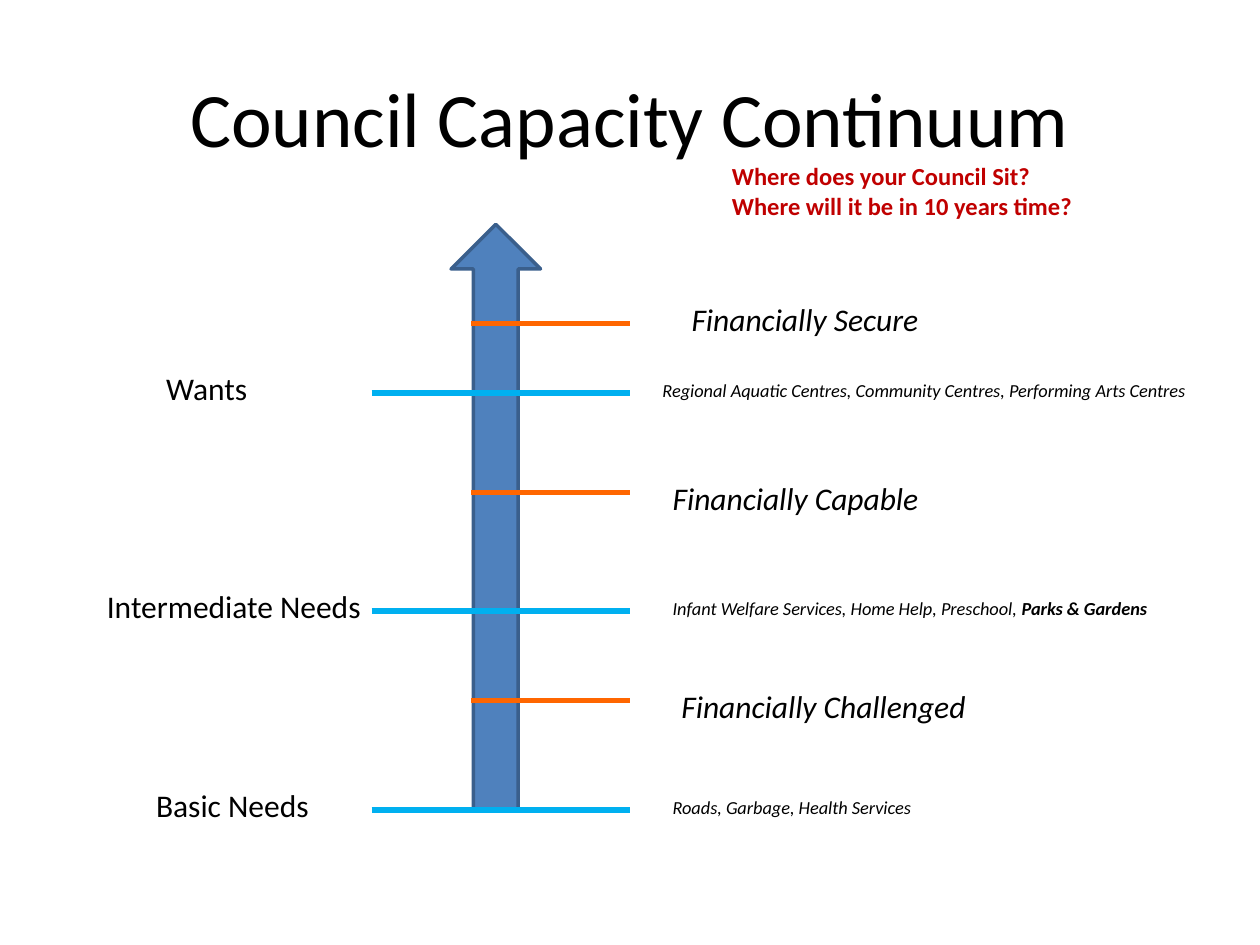
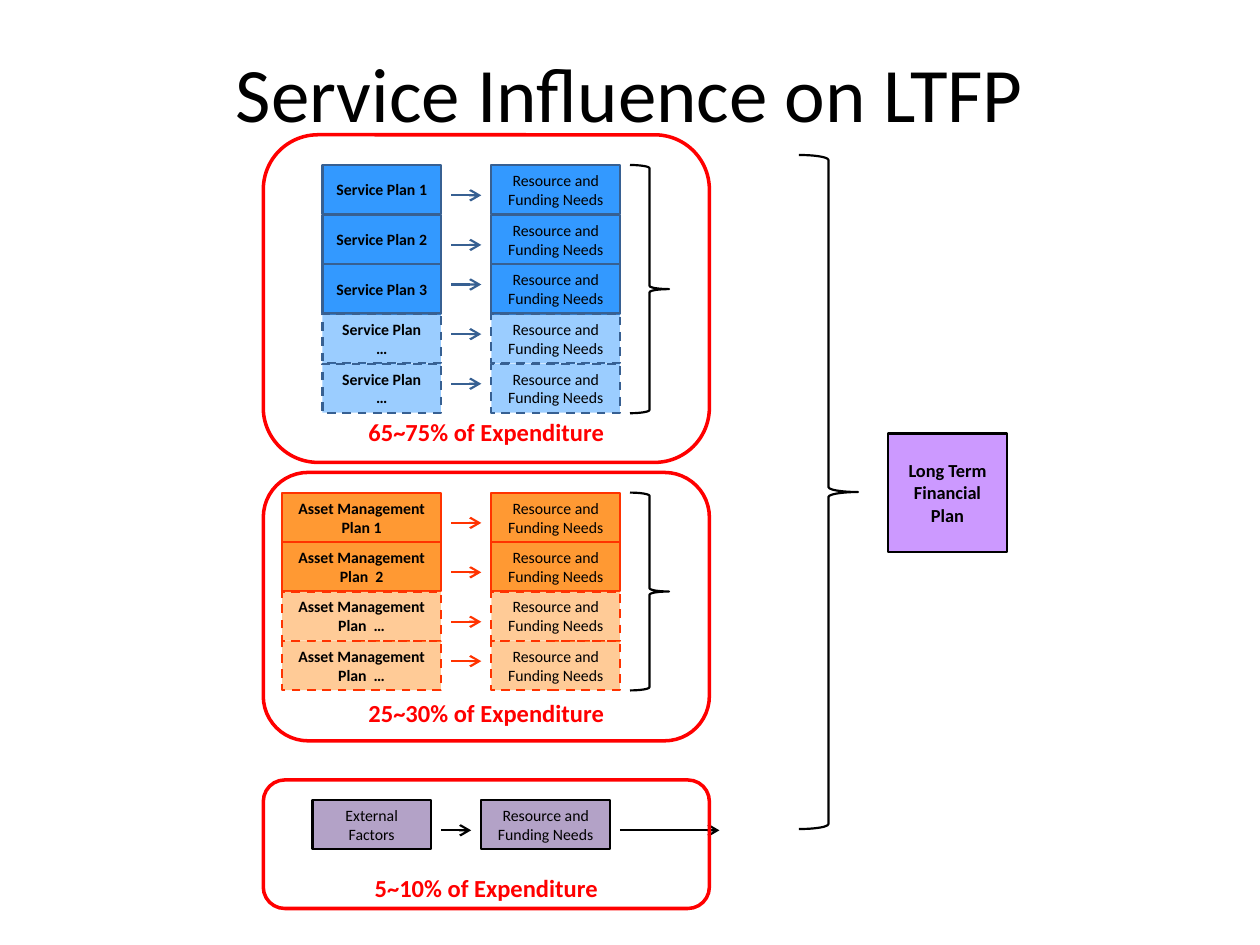
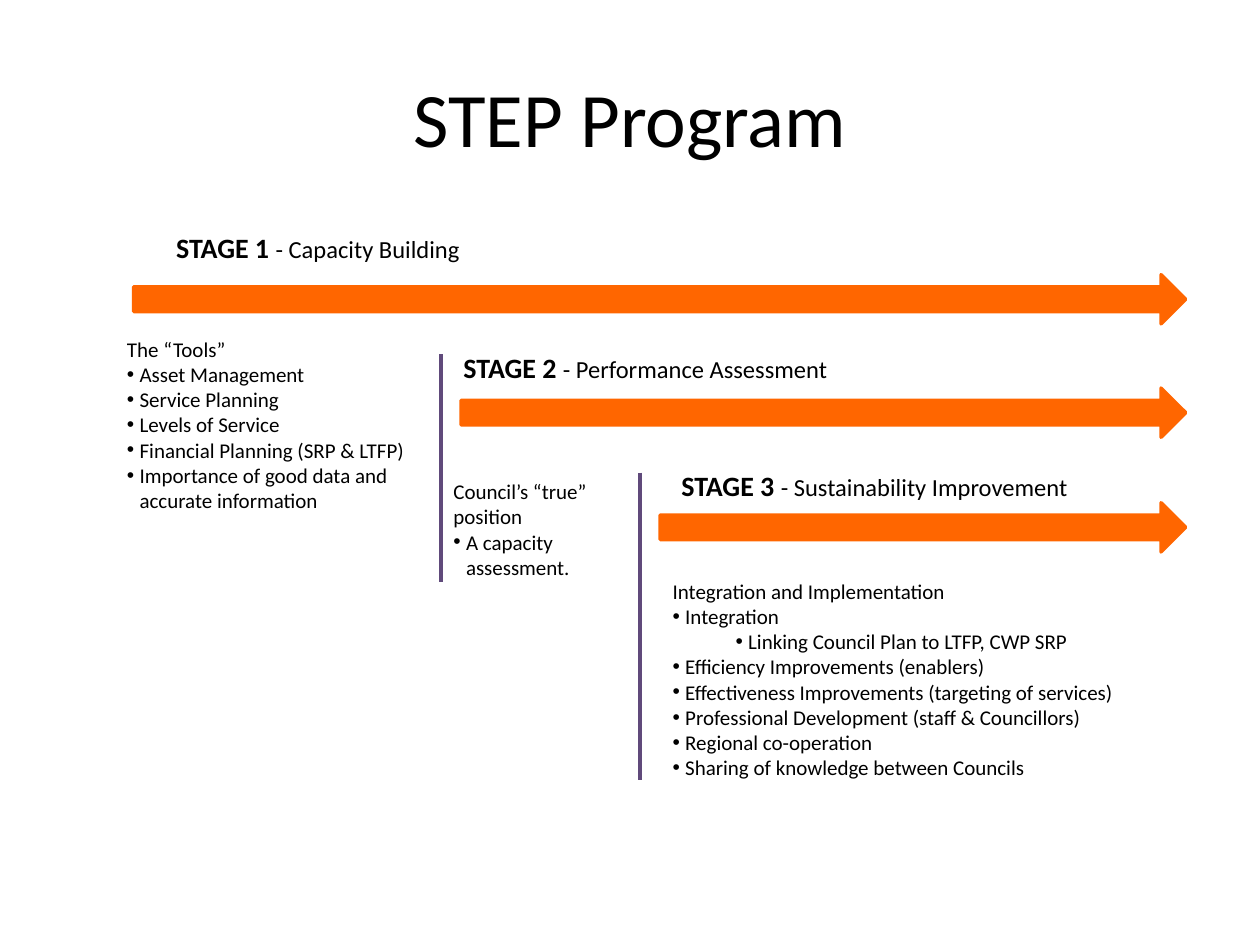
from lxml.etree import SubElement
from pptx import Presentation
from pptx.dml.color import RGBColor
from pptx.enum.dml import MSO_LINE
from pptx.enum.shapes import MSO_CONNECTOR, MSO_SHAPE
from pptx.enum.text import MSO_ANCHOR, MSO_AUTO_SIZE, PP_ALIGN
from pptx.oxml.ns import qn
from pptx.util import Inches, Pt

FONT = "Calibri"
BLACK = RGBColor(0x00, 0x00, 0x00)
RED = RGBColor(0xFF, 0x00, 0x00)
DARK_RED = RGBColor(0xC0, 0x00, 0x00)
ARROW_BLUE = RGBColor(0x4F, 0x81, 0xBD)
ARROW_EDGE = RGBColor(0x3A, 0x5F, 0x8C)
NEED_BLUE = RGBColor(0x00, 0xB0, 0xF0)
ORANGE = RGBColor(0xFF, 0x66, 0x00)
SERVICE_BLUE = RGBColor(0x33, 0x99, 0xFF)
SERVICE_EDGE = RGBColor(0x37, 0x60, 0x92)
ASSET_ORANGE = RGBColor(0xFF, 0x99, 0x33)
ASSET_EDGE = RGBColor(0xFF, 0x33, 0x00)
EXTERNAL_PURPLE = RGBColor(0xB3, 0xA2, 0xC7)
PLAN_PURPLE = RGBColor(0xCC, 0x99, 0xFF)
DIVIDER_PURPLE = RGBColor(0x60, 0x4A, 0x7B)
NEEDS = "Resource and Funding Needs"


def add_run(paragraph, text, size, color=BLACK, bold=False, italic=False):
    run = paragraph.add_run()
    run.text = text
    font = run.font
    font.name, font.size, font.bold, font.italic = FONT, Pt(size), bold, italic
    font.color.rgb = color


def add_titled_slide(presentation, title, height=1.25):
    slide = presentation.slides.add_slide(presentation.slide_layouts[5])
    shape = slide.shapes.title
    shape.left, shape.top = Inches(0.5), Inches(0.3)
    shape.width, shape.height = Inches(9), Inches(height)
    shape.text_frame.vertical_anchor = MSO_ANCHOR.MIDDLE
    paragraph = shape.text_frame.paragraphs[0]
    paragraph.alignment = PP_ALIGN.CENTER
    add_run(paragraph, title, 44)
    return slide


def add_text_box(slide, left, top, width, height, wrap=True):
    box = slide.shapes.add_textbox(Inches(left), Inches(top), Inches(width), Inches(height))
    box.text_frame.word_wrap = wrap
    box.text_frame.auto_size = MSO_AUTO_SIZE.SHAPE_TO_FIT_TEXT
    return box.text_frame


def add_label(slide, left, top, width, height, text, size, italic=False):
    paragraph = add_text_box(slide, left, top, width, height, wrap=False).paragraphs[0]
    add_run(paragraph, text, size, italic=italic)
    return paragraph


def add_preset(slide, preset, left, top, width, height, fill, edge, weight):
    shape = slide.shapes.add_shape(preset, Inches(left), Inches(top), Inches(width), Inches(height))
    shape.shadow.inherit = False
    if fill is None:
        shape.fill.background()
    else:
        shape.fill.solid()
        shape.fill.fore_color.rgb = fill
    shape.line.color.rgb = edge
    shape.line.width = Pt(weight)
    return shape


def add_line(slide, start, end, color, weight, arrow=False):
    points = [Inches(value) for value in (*start, *end)]
    connector = slide.shapes.add_connector(MSO_CONNECTOR.STRAIGHT, *points)
    connector.line.color.rgb = color
    connector.line.width = Pt(weight)
    properties = connector.element.spPr
    if arrow:
        SubElement(properties.find(qn("a:ln")), qn("a:tailEnd"), type="arrow")
    SubElement(properties, qn("a:effectLst"))


def set_shape_text(shape, text, size, color=BLACK, bold=False, anchor=MSO_ANCHOR.MIDDLE):
    frame = shape.text_frame
    frame.word_wrap = True
    frame.vertical_anchor = anchor
    paragraph = frame.paragraphs[0]
    paragraph.alignment = PP_ALIGN.CENTER
    add_run(paragraph, text, size, color, bold)


def add_need_level(slide, y, name, name_left, name_width, examples, left, width):
    add_line(slide, (2.95, y), (5, y), NEED_BLUE, 3.75)
    add_label(slide, name_left, y - 0.24, name_width, 0.4, name, 18)
    return add_label(slide, left, y - 0.16, width, 0.28, examples, 10.5, italic=True)


def add_capacity_level(slide, y, name, left, top, width):
    add_line(slide, (3.74, y), (5, y), ORANGE, 3)
    add_label(slide, left, top, width, 0.4, name, 18, italic=True)


def build_continuum(presentation):
    slide = add_titled_slide(presentation, "Council Capacity Continuum")
    add_preset(slide, MSO_SHAPE.UP_ARROW, 3.58, 1.78, 0.71, 4.65, ARROW_BLUE, ARROW_EDGE, 2)
    add_need_level(slide, 6.43, "Basic Needs", 1.14, 1.43,
                   "Roads, Garbage, Health Services", 5.24, 2.2)
    examples = add_need_level(slide, 4.85, "Intermediate Needs", 0.75, 2.24,
                              "Infant Welfare Services, Home Help, Preschool, ", 5.24, 4.01)
    add_run(examples, "Parks & Gardens", 10.5, bold=True, italic=True)
    add_need_level(slide, 3.12, "Wants", 1.22, 0.85,
                   "Regional Aquatic Centres, Community Centres, Performing Arts Centres", 5.16, 4.43)
    add_capacity_level(slide, 5.56, "Financially Challenged", 5.31, 5.4, 2.48)
    add_capacity_level(slide, 3.91, "Financially Capable", 5.24, 3.75, 2.16)
    add_capacity_level(slide, 2.57, "Financially Secure", 5.39, 2.33, 2.02)
    questions = add_text_box(slide, 5.71, 1.23, 3.62, 0.57)
    add_run(questions.paragraphs[0], "Where does your Council Sit?", 14, DARK_RED, bold=True)
    add_run(questions.add_paragraph(), "Where will it be in 10 years time?", 14, DARK_RED, bold=True)


def add_cell(slide, left, top, width, text, fill, edge, bold=False, opacity=None):
    cell = add_preset(slide, MSO_SHAPE.RECTANGLE, left, top, width, 0.39, fill, edge, 1.25)
    set_shape_text(cell, text, 9, bold=bold)
    if opacity:
        cell.line.dash_style = MSO_LINE.DASH
        color = cell.element.spPr.find(qn("a:solidFill"))[0]
        SubElement(color, qn("a:alpha"), val=str(opacity * 1000))


def add_brace(slide, left, top, width, height):
    add_preset(slide, MSO_SHAPE.RIGHT_BRACE, left, top, width, height, None, BLACK, 1.25)


def add_panel(slide, top, height, share):
    panel = add_preset(slide, MSO_SHAPE.ROUNDED_RECTANGLE, 2.09, top, 3.54, height, None, RED, 2)
    frame = panel.text_frame
    frame.margin_left = frame.margin_top = frame.margin_right = frame.margin_bottom = 0
    set_shape_text(panel, f"{share} of Expenditure", 14, RED, True, MSO_ANCHOR.BOTTOM)


def add_plan_rows(slide, top, height, names, name_width, fill, edge, opacity, centred_arrows):
    pitch = height / len(names)
    for row, name in enumerate(names):
        y = top + row * pitch
        row_opacity = opacity if name.endswith("…") else None
        add_cell(slide, 3.5 - name_width, y, name_width, name, fill, edge, True, row_opacity)
        add_cell(slide, 3.9, y, 1.02, NEEDS, fill, edge, opacity=row_opacity)
        arrow_y = y + (0.24 if row < centred_arrows else 0.16)
        add_line(slide, (3.58, arrow_y), (3.82, arrow_y), edge, 1.25, arrow=True)
    add_brace(slide, 5, top, 0.31, height)


def add_external_row(slide, top):
    add_cell(slide, 2.48, top, 0.94, "External Factors", EXTERNAL_PURPLE, BLACK)
    add_cell(slide, 3.82, top, 1.02, NEEDS, EXTERNAL_PURPLE, BLACK)
    for start, end in ((3.5, 3.74), (4.92, 5.71)):
        add_line(slide, (start, top + 0.24), (end, top + 0.24), BLACK, 1.25, arrow=True)


def build_service_influence(presentation):
    slide = add_titled_slide(presentation, "Service Influence on LTFP", 0.85)
    services = [f"Service Plan {mark}" for mark in ("1", "2", "3", "…", "…")]
    assets = [f"Asset Management Plan {mark}" for mark in ("1", " 2", " …", " …")]
    add_plan_rows(slide, 1.31, 1.97, services, 0.94, SERVICE_BLUE, SERVICE_EDGE, 49, 2)
    add_plan_rows(slide, 3.91, 1.57, assets, 1.26, ASSET_ORANGE, ASSET_EDGE, 51, 3)
    add_external_row(slide, 6.35)
    add_panel(slide, 1.07, 2.6, "65~75%")
    add_panel(slide, 3.75, 2.13, "25~30%")
    add_panel(slide, 6.19, 1.02, "5~10%")
    add_brace(slide, 6.34, 1.23, 0.47, 5.35)
    plan = add_preset(slide, MSO_SHAPE.RECTANGLE, 7.05, 3.44, 0.94, 0.94, PLAN_PURPLE, BLACK, 1.25)
    set_shape_text(plan, "Long Term Financial Plan", 10.5, bold=True)


def add_stage(slide, number, name, arrow_left, arrow_top, left, top, width):
    add_preset(slide, MSO_SHAPE.RIGHT_ARROW, arrow_left, arrow_top, 9.41 - arrow_left, 0.39,
               ORANGE, ORANGE, 2)
    paragraph = add_text_box(slide, left, top, width, 0.37).paragraphs[0]
    add_run(paragraph, f"STAGE {number} ", 16, bold=True)
    add_run(paragraph, f"- {name}", 14)


def add_bullet_list(slide, left, top, width, height, heading, items, wrap=True):
    frame = add_text_box(slide, left, top, width, height, wrap)
    add_run(frame.paragraphs[0], heading, 12)
    for level, text in items:
        paragraph = frame.add_paragraph()
        paragraph.level = level
        properties = paragraph._p.get_or_add_pPr()
        properties.set("marL", str(Inches(0.1 + 0.5 * level)))
        properties.set("indent", str(Inches(-0.1)))
        SubElement(properties, qn("a:buFont"), typeface="Arial")
        SubElement(properties, qn("a:buChar"), char="•")
        add_run(paragraph, text, 12)


def build_step_program(presentation):
    slide = add_titled_slide(presentation, "STEP Program")
    add_stage(slide, 1, "Capacity Building", 1.06, 2.18, 1.3, 1.78, 3.15)
    add_stage(slide, 2, "Performance Assessment", 3.66, 3.08, 3.58, 2.73, 4.09)
    add_stage(slide, 3, "Sustainability Improvement", 5.24, 3.99, 5.31, 3.67, 3.94)
    add_bullet_list(slide, 0.91, 2.62, 2.44, 1.72, "The “Tools”", [
        (0, "Asset Management"),
        (0, "Service Planning"),
        (0, "Levels of Service"),
        (0, "Financial Planning (SRP & LTFP)"),
        (0, "Importance of good data and accurate information"),
    ])
    add_bullet_list(slide, 5.24, 4.54, 3.74, 1.72, "Integration and Implementation", [
        (0, "Integration"),
        (1, "Linking Council Plan to LTFP, CWP SRP"),
        (0, "Efficiency Improvements (enablers)"),
        (0, "Effectiveness Improvements (targeting of services)"),
        (0, "Professional Development (staff & Councillors)"),
        (0, "Regional co-operation"),
        (0, "Sharing of knowledge between Councils"),
    ], wrap=False)
    add_bullet_list(slide, 3.5, 3.75, 1.42, 0.91, "Council’s “true” position",
                    [(0, "A capacity assessment.")])
    add_line(slide, (3.5, 2.81), (3.5, 4.62), DIVIDER_PURPLE, 2.5)
    add_line(slide, (5.08, 3.75), (5.08, 6.19), DIVIDER_PURPLE, 2.5)


def main():
    presentation = Presentation()
    presentation.slide_width, presentation.slide_height = Inches(10), Inches(7.5)
    build_continuum(presentation)
    build_service_influence(presentation)
    build_step_program(presentation)
    presentation.save("out.pptx")


if __name__ == "__main__":
    main()
